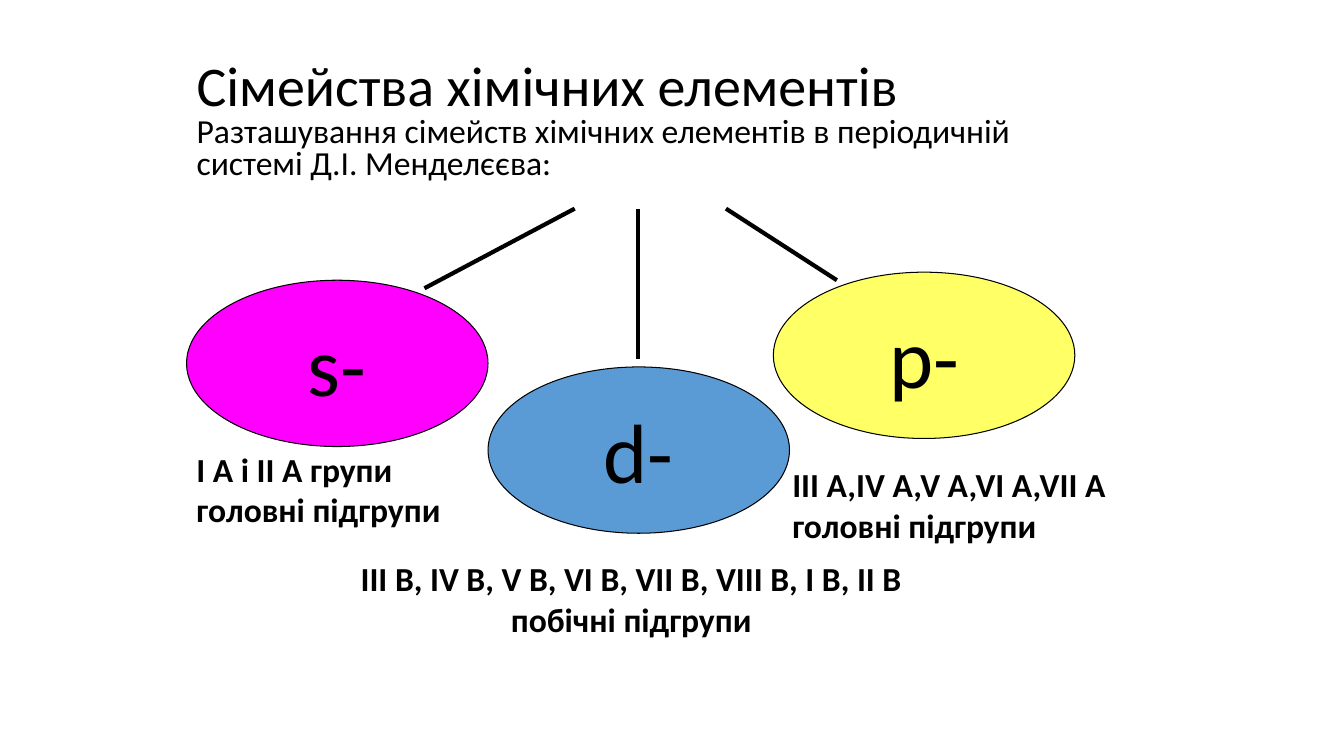
import pptx
import pptx.dml.color
import pptx.enum.shapes
import pptx.enum.text
import pptx.util
from lxml import etree
from pptx.util import Inches

COLORS = {"black": "000000", "s": "FF00FF", "p": "FFFF66", "d": "5B9BD5"}
ELLIPSE_SIZE = (2.99, 1.65)
FAMILIES = [("s", 1.85, 2.78), ("p", 7.67, 2.7), ("d", 4.84, 3.64)]
BRANCHES = [(5.7, 2.07, 4.21, 2.86), (6.33, 2.07, 6.33, 3.56), (7.2, 2.07, 8.3, 2.78)]
LEFT = pptx.enum.text.PP_ALIGN.LEFT
CENTER = pptx.enum.text.PP_ALIGN.CENTER
CAPTIONS = [
    ((1.85, 4.4, 2.64, 0.91), ["I A і II A групи\vголовні підгрупи"], LEFT, 1.0),
    ((7.76, 4.6, 3.34, 0.87), ["III A,IV A,V A,VI A,VII A", "головні підгрупи"], LEFT, 0.9),
    ((3.45, 5.53, 5.62, 0.87),
     ["III В, IV В, V В, VI В, VII В, VIII В, I В, II В", "побічні підгрупи"], CENTER, 0.9),
]


def rgb(name):
    """Return the named colour."""
    return pptx.dml.color.RGBColor.from_string(COLORS[name])


def set_values(target, values):
    """Set each attribute of the target from a dict."""
    for name, value in values.items():
        setattr(target, name, value)


def format_font(font, size, bold=False):
    """Apply the slide's typeface in black."""
    set_values(font, {"name": "Calibri", "size": pptx.util.Pt(size), "bold": bold})
    font.color.rgb = rgb("black")


def format_line(line, width):
    """Give a line its black colour and width."""
    line.color.rgb = rgb("black")
    line.width = pptx.util.Pt(width)


def add_heading(slide, box):
    """Fill the title placeholder with the heading and its explanation."""
    title = slide.shapes.title
    set_values(title, dict(zip(("left", "top", "width", "height"), map(Inches, box))))
    set_values(title.text_frame, {
        "word_wrap": True,
        "auto_size": pptx.enum.text.MSO_AUTO_SIZE.NONE,
        "vertical_anchor": pptx.enum.text.MSO_ANCHOR.TOP,
        "margin_top": Inches(0.06),
    })
    paragraph = title.text_frame.paragraphs[0]
    set_values(paragraph, {"alignment": LEFT, "line_spacing": 0.8})
    heading = paragraph.add_run()
    heading.text = "Сімейства хімічних елементів"
    format_font(heading.font, 40)
    paragraph.add_line_break()
    explanation = paragraph.add_run()
    explanation.text = "Разташування сімейств хімічних елементів в періодичній системі Д.І. Менделєєва:"
    format_font(explanation.font, 24)


def add_family(slide, family, box):
    """Draw the ellipse of one element family."""
    ellipse = slide.shapes.add_shape(pptx.enum.shapes.MSO_SHAPE.OVAL, *map(Inches, box))
    ellipse.shadow.inherit = False
    ellipse.fill.solid()
    ellipse.fill.fore_color.rgb = rgb(family)
    format_line(ellipse.line, 0.75)
    set_values(ellipse.text_frame, {
        "word_wrap": False, "vertical_anchor": pptx.enum.text.MSO_ANCHOR.MIDDLE})
    paragraph = ellipse.text_frame.paragraphs[0]
    set_values(paragraph, {"text": f"{family}-", "alignment": CENTER})
    format_font(paragraph.runs[0].font, 60)


def add_branch(slide, ends):
    """Draw a line from the heading to a family."""
    branch = slide.shapes.add_connector(
        pptx.enum.shapes.MSO_CONNECTOR.STRAIGHT, *map(Inches, ends))
    format_line(branch.line, 3)
    properties = branch.element.spPr
    etree.SubElement(properties, pptx.oxml.ns.qn("a:effectLst"))


def add_caption(slide, box, lines, alignment, first_spacing):
    """Write the groups and subgroups of a family."""
    frame = slide.shapes.add_textbox(*map(Inches, box)).text_frame
    set_values(frame, {
        "word_wrap": False, "auto_size": pptx.enum.text.MSO_AUTO_SIZE.SHAPE_TO_FIT_TEXT})
    for index, line in enumerate(lines):
        paragraph = frame.add_paragraph() if index else frame.paragraphs[0]
        spacing = 1.0 if index else first_spacing
        set_values(paragraph, {"text": line, "alignment": alignment, "line_spacing": spacing})
        for run in paragraph.runs:
            format_font(run.font, 24, bold=True)


def main():
    """Build and save the slide of element families."""
    presentation = pptx.Presentation()
    set_values(presentation, {"slide_width": Inches(13.33), "slide_height": Inches(7.5)})
    slide = presentation.slides.add_slide(presentation.slide_layouts[5])
    add_heading(slide, (1.85, 0.57, 9.31, 1.65))
    for family, left, top in FAMILIES:
        add_family(slide, family, (left, top, *ELLIPSE_SIZE))
    for ends in BRANCHES:
        add_branch(slide, ends)
    for caption in CAPTIONS:
        add_caption(slide, *caption)
    presentation.save("out.pptx")


if __name__ == "__main__":
    main()
